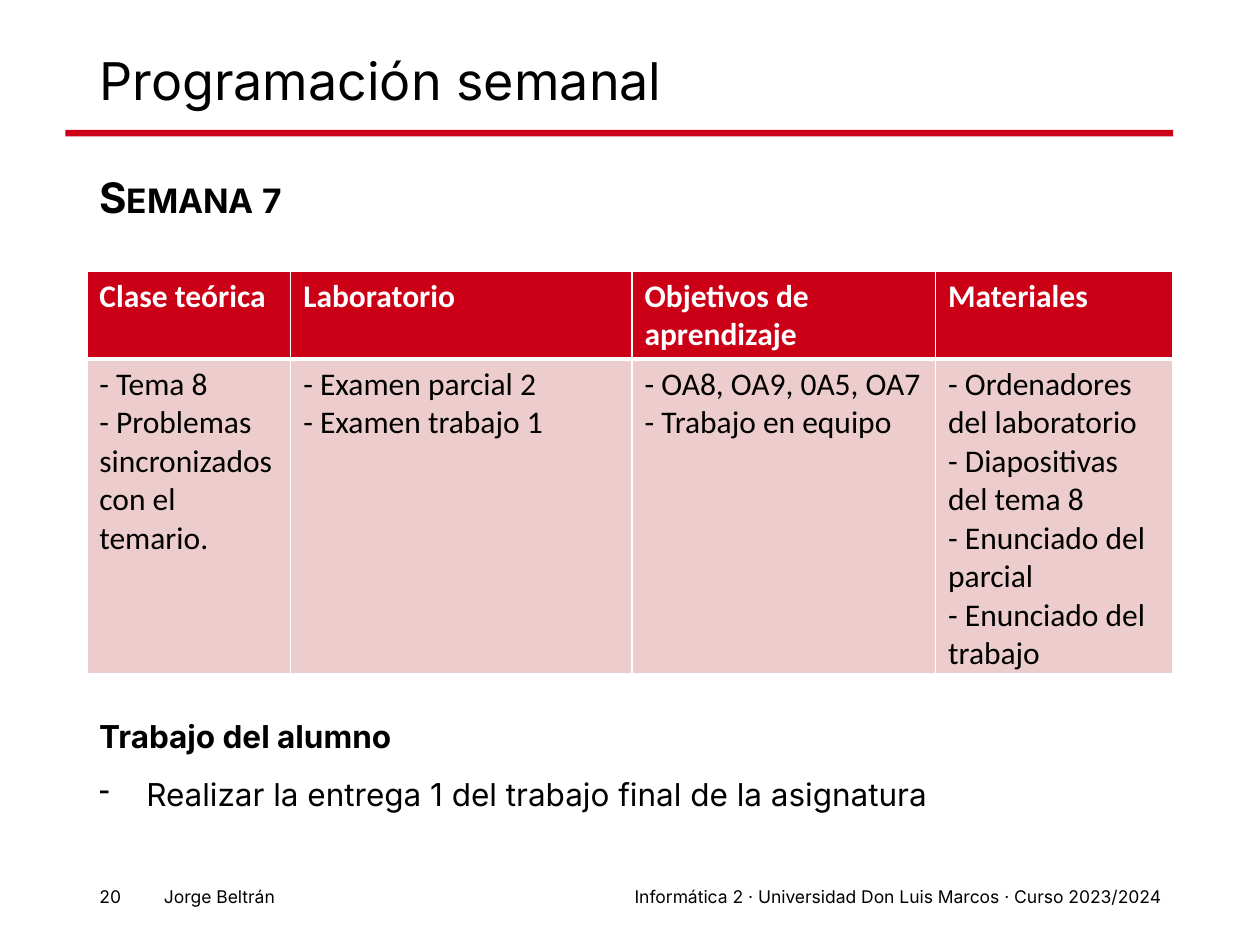
from lxml import etree
from pptx import Presentation
from pptx.dml.color import RGBColor
from pptx.enum.shapes import MSO_SHAPE
from pptx.enum.text import MSO_ANCHOR, PP_ALIGN
from pptx.oxml.ns import qn
from pptx.util import Cm, Pt

RECTANGLE = MSO_SHAPE.RECTANGLE
LEFT, RIGHT = PP_ALIGN.LEFT, PP_ALIGN.RIGHT
TOP, MIDDLE = MSO_ANCHOR.TOP, MSO_ANCHOR.MIDDLE

RED, PINK, BLACK, WHITE = "CB0017", "ECCCCC", "000000", "FFFFFF"
MARGIN, WIDTH = 1.75, 21.9

COLUMNS = [
    (4.11, "Clase teórica",
     ["- Tema 8", "- Problemas sincronizados con el temario."]),
    (6.88, "Laboratorio",
     ["- Examen parcial 2", "- Examen trabajo 1"]),
    (6.12, "Objetivos de aprendizaje",
     ["- OA8, OA9, 0A5, OA7", "- Trabajo en equipo"]),
    (4.79, "Materiales",
     ["- Ordenadores del laboratorio", "- Diapositivas del tema 8",
      "- Enunciado del parcial", "- Enunciado del trabajo"]),
]


def color(value):
    """Turn a hex string into a colour."""
    return RGBColor.from_string(value)


def add_run(p, text, size, font="Inter", fill=BLACK, bold=False):
    """Add one formatted run to a paragraph."""
    r = p.add_run()
    r.text = text
    r.font.size, r.font.name, r.font.bold = Pt(size), font, bold
    r.font.color.rgb = color(fill)
    return r


def add_box(s, left, top, width, height, anchor=TOP):
    """Add a wrapping text box and return its text frame."""
    tf = s.shapes.add_textbox(Cm(left), Cm(top), Cm(width), Cm(height)).text_frame
    tf.word_wrap = True
    tf.vertical_anchor = anchor
    return tf


def space_body(p):
    """Apply the body text spacing to a paragraph."""
    p.line_spacing = 1.2
    p.space_before = Pt(7.5)


def add_dash(p, indent):
    """Give a paragraph a hanging dash bullet."""
    pPr = p._p.get_or_add_pPr()
    pPr.set("marL", str(Cm(indent)))
    pPr.set("indent", str(-Cm(indent)))
    etree.SubElement(pPr, qn("a:buChar")).set("char", "-")


def add_header(s, left, top, width):
    """Place the slide title and the red rule below it."""
    p = add_box(s, left, top, width, 1.32, MIDDLE).paragraphs[0]
    p.line_spacing = 0.9
    add_run(p, "Programación semanal", 29.7)
    rule = s.shapes.add_shape(RECTANGLE, Cm(left - 0.43), Cm(top + 1.6),
                              Cm(width + 0.43), Cm(0.13))
    rule.shadow.inherit = False
    rule.fill.solid()
    rule.fill.fore_color.rgb = color(RED)
    rule.line.fill.background()


def add_week(s, left, top, width):
    """Place the week heading in small capitals."""
    p = add_box(s, left, top, width, 1.73).paragraphs[0]
    space_body(p)
    r = add_run(p, "Semana 7", 24, bold=True)
    r.font._element.set("cap", "small")


def set_borders(cell, bottom):
    """Draw white borders around a cell, with the given bottom width."""
    tcPr = cell._tc.get_or_add_tcPr()
    for index, (side, width) in enumerate(
            [("L", 1), ("R", 1), ("T", 1), ("B", bottom)]):
        ln = etree.Element(qn(f"a:ln{side}"), w=str(Pt(width)))
        fill = etree.SubElement(ln, qn("a:solidFill"))
        etree.SubElement(fill, qn("a:srgbClr")).set("val", WHITE)
        tcPr.insert(index, ln)


def fill_cell(cell, lines, fill, text_fill, bold, bottom):
    """Write one paragraph per line and format the cell."""
    cell.fill.solid()
    cell.fill.fore_color.rgb = color(fill)
    set_borders(cell, bottom)
    tf = cell.text_frame
    for i, line in enumerate(lines):
        p = tf.add_paragraph() if i else tf.paragraphs[0]
        add_run(p, line, 18, "Calibri", text_fill, bold)


def add_schedule(s, left, top, width, height):
    """Place the weekly schedule table."""
    frame = s.shapes.add_table(2, len(COLUMNS), Cm(left), Cm(top),
                               Cm(width), Cm(height))
    table = frame.table
    table.horz_banding = False
    for row in table.rows:
        row.height = Cm(1.03)
    for i, (col_width, heading, items) in enumerate(COLUMNS):
        table.columns[i].width = Cm(col_width)
        fill_cell(table.cell(0, i), [heading], RED, WHITE, True, 3)
        fill_cell(table.cell(1, i), items, PINK, BLACK, False, 1)
    frame.height = Cm(height)


def add_homework(s, left, top, width, height):
    """Place the student work heading and its item."""
    tf = add_box(s, left, top, width, height)
    p = tf.paragraphs[0]
    space_body(p)
    add_run(p, "Trabajo del alumno", 18, bold=True)
    p = tf.add_paragraph()
    space_body(p)
    add_dash(p, 0.95)
    add_run(p, "Realizar la entrega 1 del trabajo final de la asignatura", 18)


def add_footer(s, left, top, width):
    """Place the page number, the author and the course, right-aligned."""
    for x, w, text in [
        (left + 4.67, width - 4.67,
         "Informática 2 · Universidad Don Luis Marcos · Curso 2023/2024"),
        (left - 0.28, 1.22, "20"),
        (left - 1.22, 5.26, "Jorge Beltrán"),
    ]:
        p = add_box(s, x, top, w, 0.69).paragraphs[0]
        p.alignment = RIGHT
        add_run(p, text, 10)


def main():
    """Build and save the slide."""
    prs = Presentation()
    prs.slide_width, prs.slide_height = Cm(25.4), Cm(19.05)
    s = prs.slides.add_slide(prs.slide_layouts[6])
    add_header(s, MARGIN, 1.02, WIDTH)
    add_week(s, MARGIN, 3.12, WIDTH)
    add_schedule(s, MARGIN, 5.46, WIDTH, 8.13)
    add_homework(s, MARGIN, 14.17, WIDTH, 3.18)
    add_footer(s, MARGIN, 17.73, WIDTH)
    prs.save("out.pptx")


if __name__ == "__main__":
    main()
